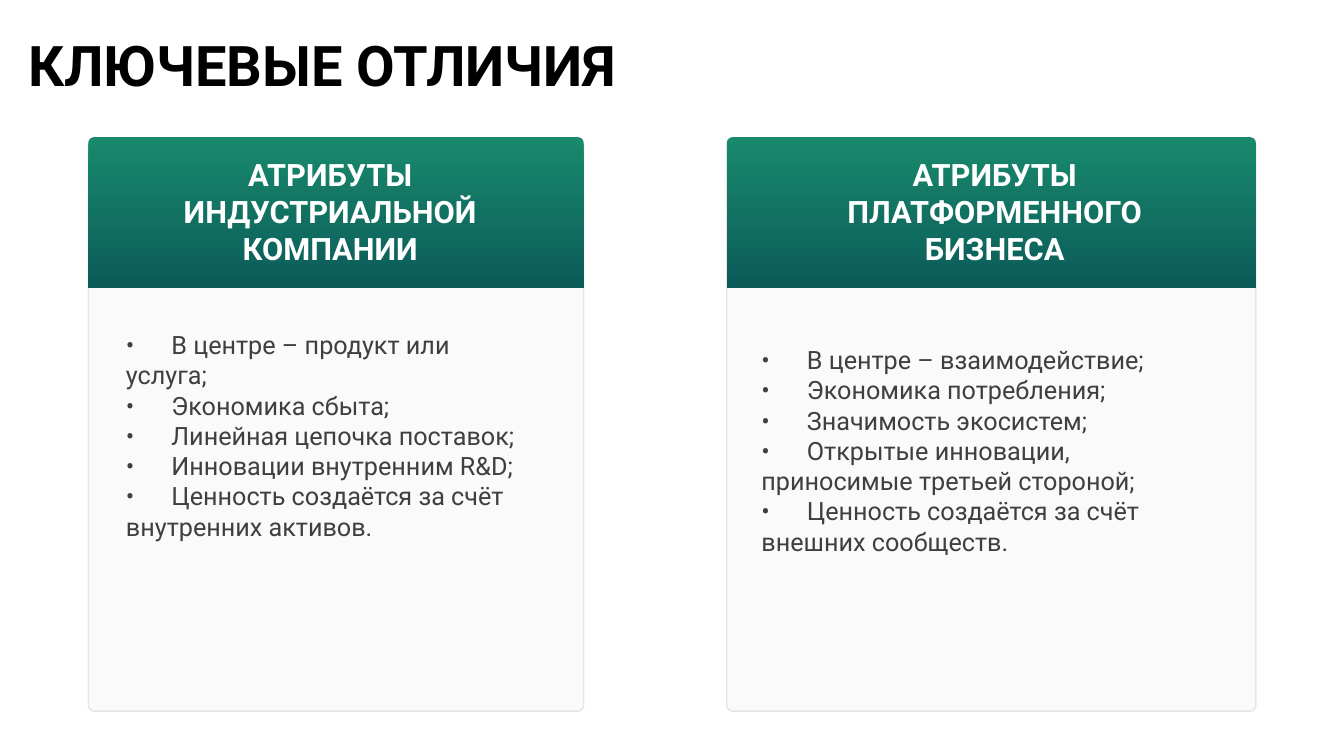
from lxml.etree import SubElement
from pptx import Presentation
from pptx.dml.color import RGBColor
from pptx.enum.shapes import MSO_SHAPE
from pptx.enum.text import MSO_ANCHOR, MSO_AUTO_SIZE, PP_ALIGN
from pptx.oxml.ns import qn
from pptx.util import Cm, Pt

TITLE = "КЛЮЧЕВЫЕ ОТЛИЧИЯ"
# Lengths are in centimetres; heading and list hold left, width and, for the list, height.
CARDS = [
    {
        "left": 4.45, "width": 24.97,
        "heading": "АТРИБУТЫ ИНДУСТРИАЛЬНОЙ КОМПАНИИ",
        "heading_place": (6.2, 20.9),
        "items": [
            "В центре – продукт или услуга;",
            "Экономика сбыта;",
            "Линейная цепочка поставок;",
            "Инновации внутренним R&D;",
            "Ценность создаётся за счёт внутренних активов.",
        ],
        "list_place": (6.2, 20.04, 9.53),
    },
    {
        "left": 36.63, "width": 26.67,
        "heading": "АТРИБУТЫ ПЛАТФОРМЕННОГО БИЗНЕСА",
        "heading_place": (39.37, 21.54),
        "items": [
            "В центре – взаимодействие;",
            "Экономика потребления;",
            "Значимость экосистем;",
            "Открытые инновации, приносимые третьей стороной;",
            "Ценность создаётся за счёт внешних сообществ.",
        ],
        "list_place": (38.23, 23.32, 11.05),
    },
]
FONT = "Roboto"
CARD_TOP, CARD_HEIGHT = 6.96, 28.88
HEADER_TOP, HEADER_HEIGHT = 6.91, 7.62
HEADING_TOP, HEADING_HEIGHT = 7.7, 5.92
LIST_TOP = 17.17
CORNER = 0.3
TAB_STOP = 2.29


def color(value):
    return RGBColor.from_string(value)


def write(frame, lines, size, ink, bold=False, align=PP_ALIGN.LEFT):
    """Fill a text frame with one paragraph per line and return the paragraphs."""
    frame.word_wrap = True
    frame.auto_size = MSO_AUTO_SIZE.NONE
    frame.vertical_anchor = MSO_ANCHOR.MIDDLE
    frame.margin_left = frame.margin_right = Cm(0.15)
    frame.margin_top = frame.margin_bottom = Cm(0.15)
    for index, line in enumerate(lines):
        para = frame.paragraphs[0] if index == 0 else frame.add_paragraph()
        para.alignment = align
        span = para.add_run()
        span.text = line
        span.font.name = FONT
        span.font.size = Pt(size)
        span.font.bold = bold
        span.font.color.rgb = color(ink)
    return frame.paragraphs


def add_tab_stop(para):
    stops = SubElement(para._p.get_or_add_pPr(), qn("a:tabLst"))
    SubElement(stops, qn("a:tab"), pos=str(Cm(TAB_STOP)), algn="l")


def add_panel(slide, kind, left, top, width, height):
    """Add a shape without shadow whose corners have the common radius."""
    panel = slide.shapes.add_shape(kind, Cm(left), Cm(top), Cm(width), Cm(height))
    panel.shadow.inherit = False
    panel.adjustments[0] = CORNER / min(width, height)
    return panel


def add_card(slide, card):
    left, width = card["left"], card["width"]
    body = add_panel(slide, MSO_SHAPE.ROUNDED_RECTANGLE, left, CARD_TOP, width, CARD_HEIGHT)
    body.fill.solid()
    body.fill.fore_color.rgb = color("FAFAFA")
    body.line.color.rgb = color("E5E5E5")
    body.line.width = Pt(2)

    header = add_panel(slide, MSO_SHAPE.ROUND_2_SAME_RECTANGLE,
                       left, HEADER_TOP, width, HEADER_HEIGHT)
    header.line.fill.background()
    header.fill.gradient()
    header.fill.gradient_angle = 270
    for stop, position, shade in zip(header.fill.gradient_stops, (0, 1), ("19896C", "0B5B59")):
        stop.position = position
        stop.color.rgb = color(shade)

    left, width = card["heading_place"]
    heading = slide.shapes.add_textbox(Cm(left), Cm(HEADING_TOP), Cm(width), Cm(HEADING_HEIGHT))
    write(heading.text_frame, [card["heading"]], 44, "FFFFFF", True, PP_ALIGN.CENTER)

    left, width, height = card["list_place"]
    box = slide.shapes.add_textbox(Cm(left), Cm(LIST_TOP), Cm(width), Cm(height))
    lines = [f"•\t{item}" for item in card["items"]]
    for para in write(box.text_frame, lines, 36, "3F3F3F"):
        add_tab_stop(para)


def main():
    deck = Presentation()
    deck.slide_width, deck.slide_height = Cm(67.74), Cm(38.1)
    slide = deck.slides.add_slide(deck.slide_layouts[5])
    title = slide.shapes.title
    title.left, title.top, title.width, title.height = Cm(1.27), Cm(1.37), Cm(59.11), Cm(3.71)
    write(title.text_frame, [TITLE], 80, "000000", True)
    for card in CARDS:
        add_card(slide, card)
    deck.save("out.pptx")


if __name__ == "__main__":
    main()
